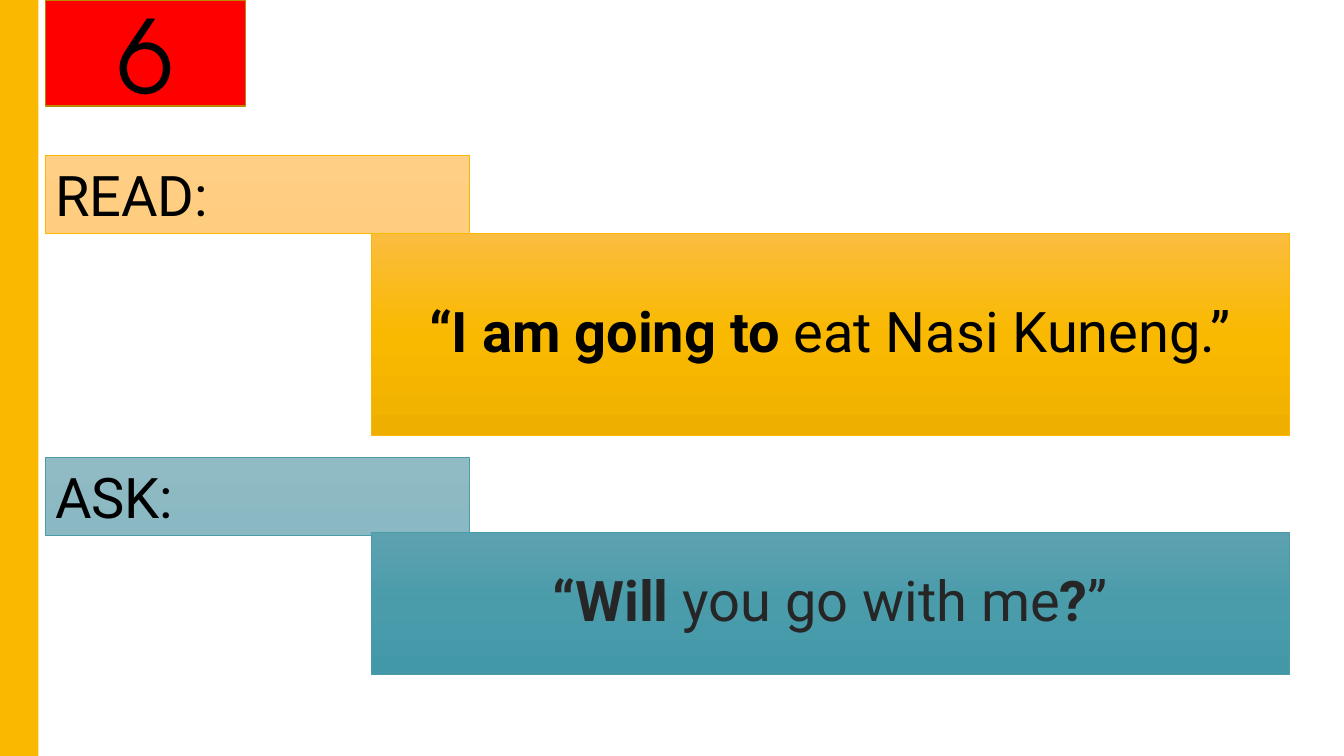
import copy

import pptx
import pptx.dml.color
import pptx.enum.shapes
import pptx.enum.text
import pptx.oxml.ns
import pptx.util

Cm = pptx.util.Cm
Pt = pptx.util.Pt
ALIGN = pptx.enum.text.PP_ALIGN
ANCHOR = pptx.enum.text.MSO_ANCHOR

LEFT = 1.14
LABEL_SIZE = (10.69, 1.96)
SENTENCE_LEFT, SENTENCE_WIDTH = 9.35, 23.14


def rgb(value):
    return pptx.dml.color.RGBColor.from_string(value)


def fill_shape(sp, colors):
    """Fill with one colour, or with evenly spaced stops from top to bottom."""
    if len(colors) == 1:
        sp.fill.solid()
        sp.fill.fore_color.rgb = rgb(colors[0])
        return
    sp.fill.gradient()
    sp.fill.gradient_angle = 270
    stops = sp.element.spPr.find(".//" + pptx.oxml.ns.qn("a:gsLst"))
    for _ in colors[2:]:
        stops.append(copy.deepcopy(stops[-1]))
    for i, (stop, color) in enumerate(zip(sp.fill.gradient_stops, colors)):
        stop.position = i / (len(colors) - 1)
        stop.color.rgb = rgb(color)


def add_box(s, box, colors, line=None, line_width=0.5):
    sp = s.shapes.add_shape(pptx.enum.shapes.MSO_SHAPE.RECTANGLE, *map(Cm, box))
    sp.shadow.inherit = False
    fill_shape(sp, colors)
    if line:
        sp.line.color.rgb = rgb(line)
        sp.line.width = Pt(line_width)
    else:
        sp.line.fill.background()
    return sp


def write(sp, runs, color, align, anchor, size=40, font="Roboto"):
    """Write (text, bold) runs as the only paragraph of a shape."""
    tf = sp.text_frame
    tf.word_wrap = True
    tf.vertical_anchor = anchor
    p = tf.paragraphs[0]
    p.alignment = align
    for text, bold in runs:
        r = p.add_run()
        r.text = text
        r.font.name = font
        r.font.size = Pt(size)
        r.font.bold = bold
        r.font.color.rgb = rgb(color)


def add_number(s, box, number):
    sp = add_box(s, box, ["FF0000"], "B98900", 1)
    write(sp, [(number, False)], "000000", ALIGN.CENTER, ANCHOR.MIDDLE,
          72, "TeX Gyre Adventor")


def add_label(s, box, text, colors, line):
    sp = add_box(s, box, colors, line)
    write(sp, [(text, False)], "000000", ALIGN.LEFT, ANCHOR.TOP)
    sp.text_frame.auto_size = pptx.enum.text.MSO_AUTO_SIZE.SHAPE_TO_FIT_TEXT


def add_sentence(s, box, runs, color, colors, line):
    sp = add_box(s, box, colors, line)
    write(sp, runs, color, ALIGN.CENTER, ANCHOR.MIDDLE)
    tf = sp.text_frame
    tf.margin_left = tf.margin_right = tf.margin_top = tf.margin_bottom = Cm(0.51)
    tf.paragraphs[0].line_spacing = 0.9


def main():
    prs = pptx.Presentation()
    prs.slide_width, prs.slide_height = Cm(33.87), Cm(19.05)
    s = prs.slides.add_slide(prs.slide_layouts[6])

    add_box(s, (0, 0, 0.97, 19.05), ["FAB900"])
    add_number(s, (LEFT, 0, 5.05, 2.67), "6")
    add_label(s, (LEFT, 3.91, *LABEL_SIZE), "READ:",
              ["FFCF86", "FFCD80"], "FAB900")
    add_label(s, (LEFT, 11.53, *LABEL_SIZE), "ASK:",
              ["90BAC4", "8AB8C3"], "4B9BAA")
    add_sentence(s, (SENTENCE_LEFT, 13.41, SENTENCE_WIDTH, 3.58),
                 [("“Will", True), (" you go with me", False),
                  ("?", True), ("”", False)],
                 "262626", ["5CA1AF", "4A9CAB", "4398A8"], "4B9BAA")
    add_sentence(s, (SENTENCE_LEFT, 5.89, SENTENCE_WIDTH, 5.08),
                 [("“I am going to", True), (" eat Nasi Kuneng.”", False)],
                 "000000", ["FBBD3F", "F9B900", "EFAF00"], "FAB900")
    prs.save("out.pptx")


if __name__ == "__main__":
    main()
